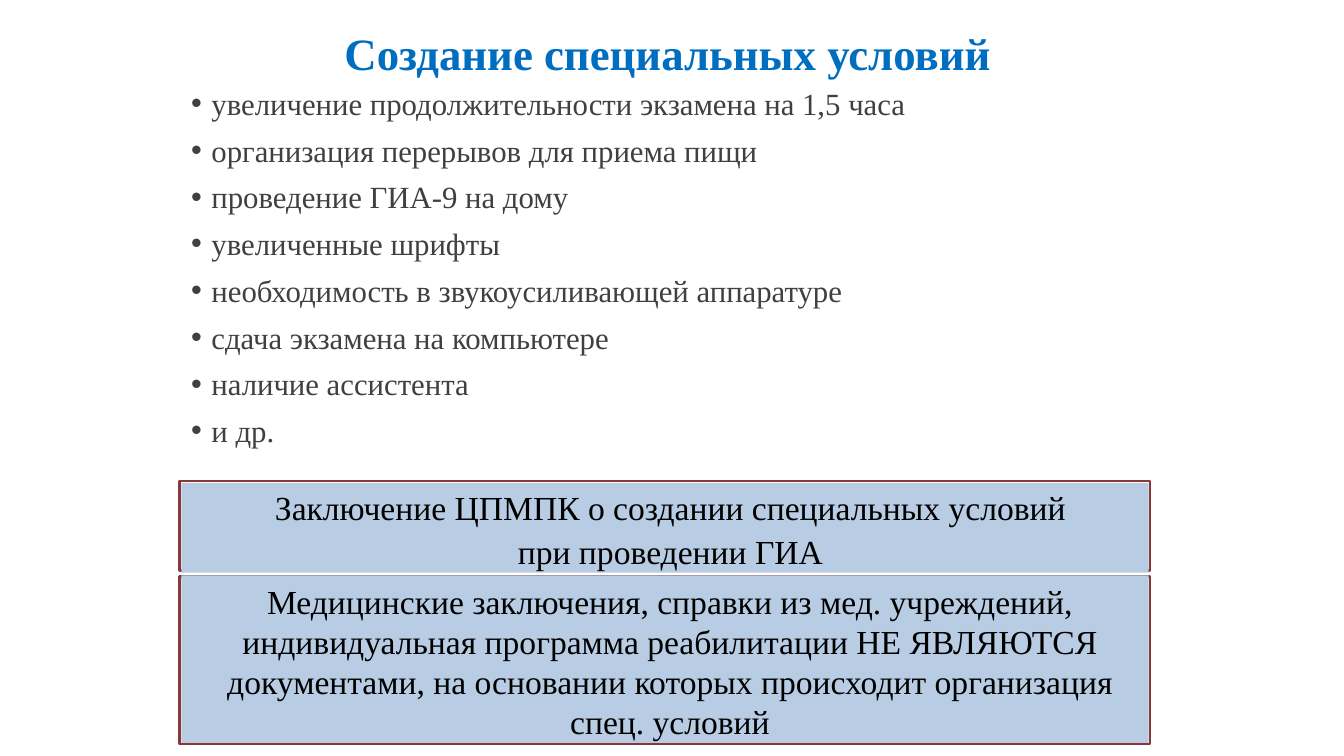
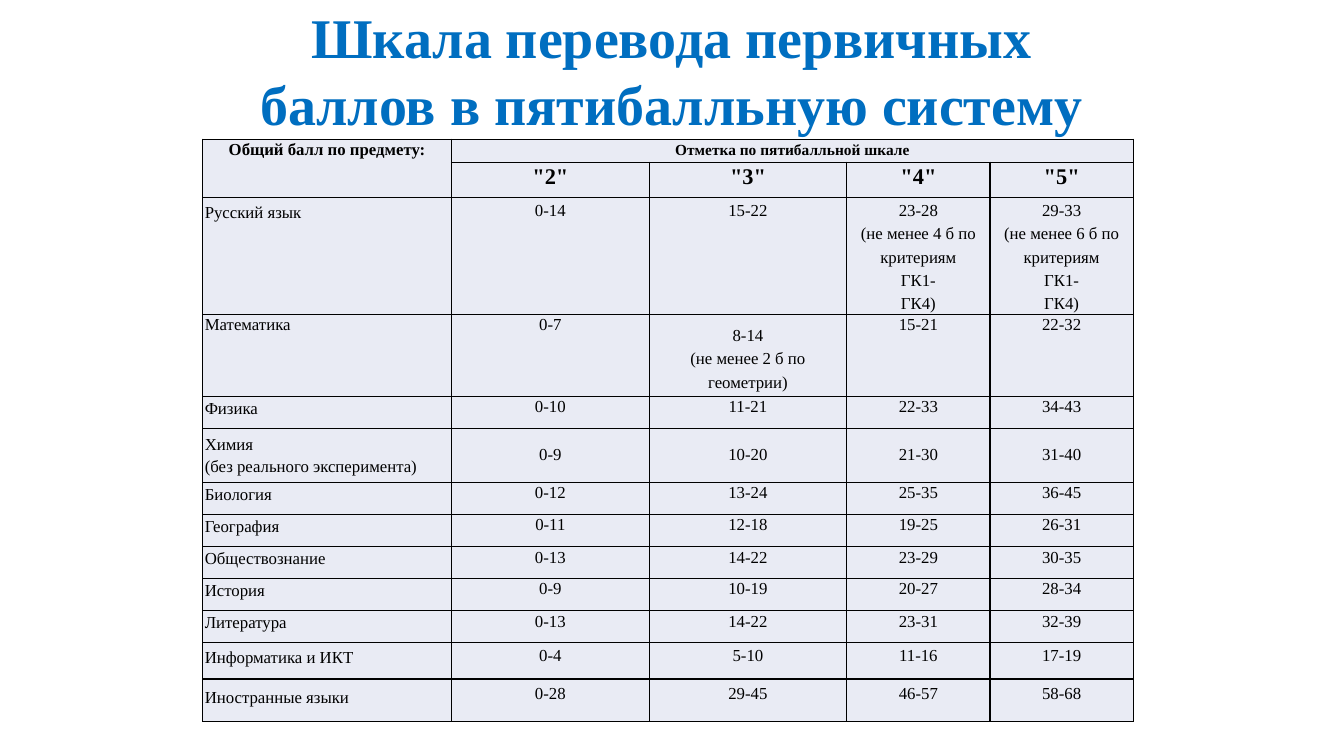
from lxml.etree import SubElement
from pptx import Presentation
from pptx.dml.color import RGBColor
from pptx.enum.shapes import MSO_SHAPE as Shape
from pptx.enum.text import MSO_ANCHOR as Anchor, MSO_AUTO_SIZE as AutoSize, PP_ALIGN as Align
from pptx.oxml.ns import qn
from pptx.util import Cm, Pt

FONT = "Times New Roman"
BLUE, BLACK, GREY = "006EC0", "000000", "404040"
BOX_FILL, BOX_LINE, CELL_FILL = "B8CDE3", "893836", "E9EBF4"


def colour(code):
    return RGBColor.from_string(code)


def write(frame, texts, size, code=BLACK, bold=False, align=Align.CENTER,
          before=0, spacing=None, top=0.0):
    """Fill a frame with one paragraph per text; a newline is a line break."""
    frame.word_wrap = True
    frame.auto_size = AutoSize.NONE
    frame.vertical_anchor = Anchor.TOP
    frame.margin_left = frame.margin_right = frame.margin_bottom = 0
    frame.margin_top = Cm(top)
    for number, text in enumerate(texts):
        para = frame.add_paragraph() if number else frame.paragraphs[0]
        para.alignment = align
        para.space_before = Pt(before)
        if spacing:
            para.line_spacing = Pt(spacing)
        for part, line in enumerate(text.split("\n")):
            if part:
                para.add_line_break()
            span = para.add_run()
            span.text = line
            span.font.name, span.font.size = FONT, Pt(size)
            span.font.bold = bold
            span.font.color.rgb = colour(code)


deck = Presentation()
deck.slide_width, deck.slide_height = Cm(33.87), Cm(19.05)

# Slides and titles: text, place, size, line spacing, top inset
titles = [
    ("Создание специальных условий", (8.64, 0.61, 16.38, 1.42), 32, None, 0.03),
    ("Шкала перевода первичных\nбаллов в пятибалльную систему",
     (6.53, 0, 20.78, 3.43), 40, 47.5, 0.08),
]
pages = []
for text, place, size, spacing, top in titles:
    page = deck.slides.add_slide(deck.slide_layouts[5])
    title = page.shapes.title
    title.left, title.top, title.width, title.height = map(Cm, place)
    write(title.text_frame, [text], size, BLUE, True, spacing=spacing, top=top)
    pages.append(page)
conditions_page, scale_page = pages

# Slide 1: list of conditions
conditions = [
    "увеличение продолжительности экзамена на 1,5 часа",
    "организация перерывов для приема пищи",
    "проведение ГИА-9 на дому",
    "увеличенные шрифты",
    "необходимость в звукоусиливающей аппаратуре",
    "сдача экзамена на компьютере",
    "наличие ассистента",
    "и др.",
]
bullets = conditions_page.shapes.add_textbox(Cm(4.8), Cm(1.88), Cm(18.06), Cm(9.22))
write(bullets.text_frame, conditions, 22, GREY, align=Align.LEFT, before=7, top=0.25)
for para in bullets.text_frame.paragraphs:
    props = para._p.get_or_add_pPr()
    props.set("marL", str(Cm(0.53)))
    props.set("indent", str(-Cm(0.51)))
    SubElement(props, qn("a:buFont"), typeface="Arial")
    SubElement(props, qn("a:buChar"), char="•")

# Slide 1: framed notes, the frames behind the fills
for top, height in [(12.12, 2.26), (14.53, 4.22)]:
    outline = conditions_page.shapes.add_shape(
        Shape.RECTANGLE, Cm(4.52), Cm(top), Cm(24.46), Cm(height))
    outline.shadow.inherit = False
    outline.fill.background()
    outline.line.color.rgb = colour(BOX_LINE)
    outline.line.width = Pt(1.92)

# top, height, paragraphs, line spacing, top inset, alignment, left margin, first-line indent
notes = [
    (12.17, 2.26, ["Заключение ЦПМПК о создании специальных условий\nпри проведении ГИА"],
     31.6, 0, Align.LEFT, 8.48, -6.12),
    (14.5, 4.22,
     ["Медицинские заключения, справки из мед. учреждений,\n"
      "индивидуальная программа реабилитации НЕ ЯВЛЯЮТСЯ",
      "документами, на основании которых происходит организация\nспец. условий"],
     28.6, 0.15, Align.CENTER, 0.25, 0),
]
for top, height, texts, spacing, inset, align, left, indent in notes:
    box = conditions_page.shapes.add_shape(
        Shape.RECTANGLE, Cm(4.57), Cm(top), Cm(24.38), Cm(height))
    box.shadow.inherit = False
    box.fill.solid()
    box.fill.fore_color.rgb = colour(BOX_FILL)
    box.line.fill.background()
    write(box.text_frame, texts, 24, align=align, spacing=spacing, top=inset)
    for para in box.text_frame.paragraphs:
        props = para._p.get_or_add_pPr()
        props.set("marL", str(Cm(left)))
        props.set("indent", str(Cm(indent)))

# Slide 2: score table
# Subject rows: height, label inset, score inset, label, scores
subjects = [
    (2.95, 0.15, 0.1, "Русский язык",
     ["0-14", "15-22", "23-28\n(не менее 4 б по\nкритериям\nГК1-\nГК4)",
      "29-33\n(не менее 6 б по\nкритериям\nГК1-\nГК4)"]),
    (2.06, 0.03, 0.03, "Математика",
     ["0-7", "8-14\n(не менее 2 б по\nгеометрии)", "15-21", "22-32"]),
    (0.81, 0.08, 0.03, "Физика", ["0-10", "11-21", "22-33", "34-43"]),
    (1.35, 0.18, 0.43, "Химия\n(без реального эксперимента)",
     ["0-9", "10-20", "21-30", "31-40"]),
    (0.81, 0.08, 0.03, "Биология", ["0-12", "13-24", "25-35", "36-45"]),
    (0.81, 0.08, 0.03, "География", ["0-11", "12-18", "19-25", "26-31"]),
    (0.81, 0.08, 0.05, "Обществознание", ["0-13", "14-22", "23-29", "30-35"]),
    (0.81, 0.08, 0.03, "История", ["0-9", "10-19", "20-27", "28-34"]),
    (0.81, 0.08, 0.05, "Литература", ["0-13", "14-22", "23-31", "32-39"]),
    (0.91, 0.15, 0.08, "Информатика и ИКТ", ["0-4", "5-10", "11-16", "17-19"]),
    (1.07, 0.23, 0.15, "Иностранные языки", ["0-28", "29-45", "46-57", "58-68"]),
]
widths = [6.27, 4.98, 4.98, 3.61, 3.61]
heights = [0.58, 0.89] + [subject[0] for subject in subjects]
table = scale_page.shapes.add_table(
    len(heights), len(widths), Cm(5.11), Cm(3.51), Cm(sum(widths)), Cm(sum(heights))).table
table.first_row = table.horz_banding = False
for column, width in zip(table.columns, widths):
    column.width = Cm(width)
for row, height in zip(table.rows, heights):
    row.height = Cm(height)

for cell in table.iter_cells():
    cell.margin_left = cell.margin_right = cell.margin_top = cell.margin_bottom = 0
    props = cell._tc.get_or_add_tcPr()
    for side in ("a:lnL", "a:lnR", "a:lnT", "a:lnB"):
        border = SubElement(props, qn(side), w=str(Pt(1)))
        SubElement(SubElement(border, qn("a:solidFill")), qn("a:srgbClr"), val=BLACK)
    cell.fill.solid()
    cell.fill.fore_color.rgb = colour(CELL_FILL)

table.cell(0, 0).merge(table.cell(1, 0))
table.cell(0, 1).merge(table.cell(0, 4))

# Cell texts: row, column, text, size, bold, top inset
entries = [(0, 0, "Общий балл по предмету:", 12, True, 0.03),
           (0, 1, "Отметка по пятибалльной шкале", 11, True, 0.05)]
entries += [(1, mark - 1, f'"{mark}"', 16, True, 0.05) for mark in range(2, 6)]
for row, (_, label_inset, score_inset, label, scores) in enumerate(subjects, 2):
    entries.append((row, 0, label, 12, False, label_inset))
    for column, score in enumerate(scores, 1):
        inset = 0.3 if score.startswith("8-14") else score_inset
        entries.append((row, column, score, 12, False, inset))

for row, column, text, size, bold, inset in entries:
    cell = table.cell(row, column)
    is_label = row > 1 and column == 0
    write(cell.text_frame, text.split("\n"), size, bold=bold, before=2.1,
          align=Align.LEFT if is_label else Align.CENTER)
    cell.margin_top = Cm(inset)
    cell.margin_left = Cm(0.05 if is_label else 0)
    # Notes under a score are set on a fixed line pitch
    if not is_label:
        for para in cell.text_frame.paragraphs[1:]:
            para.line_spacing = Pt(16.6)
            para.space_before = Pt(0)

deck.save("out.pptx")
